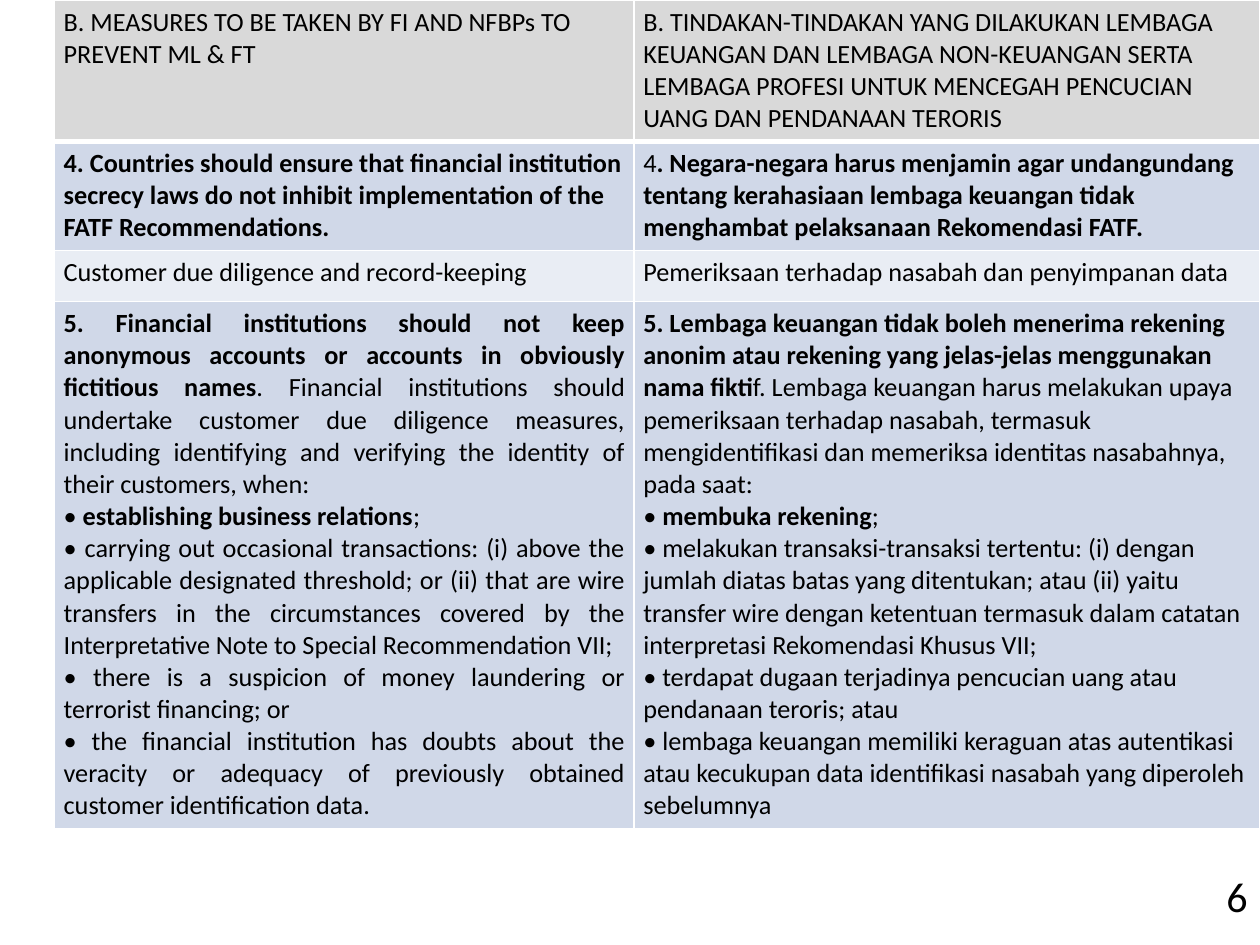
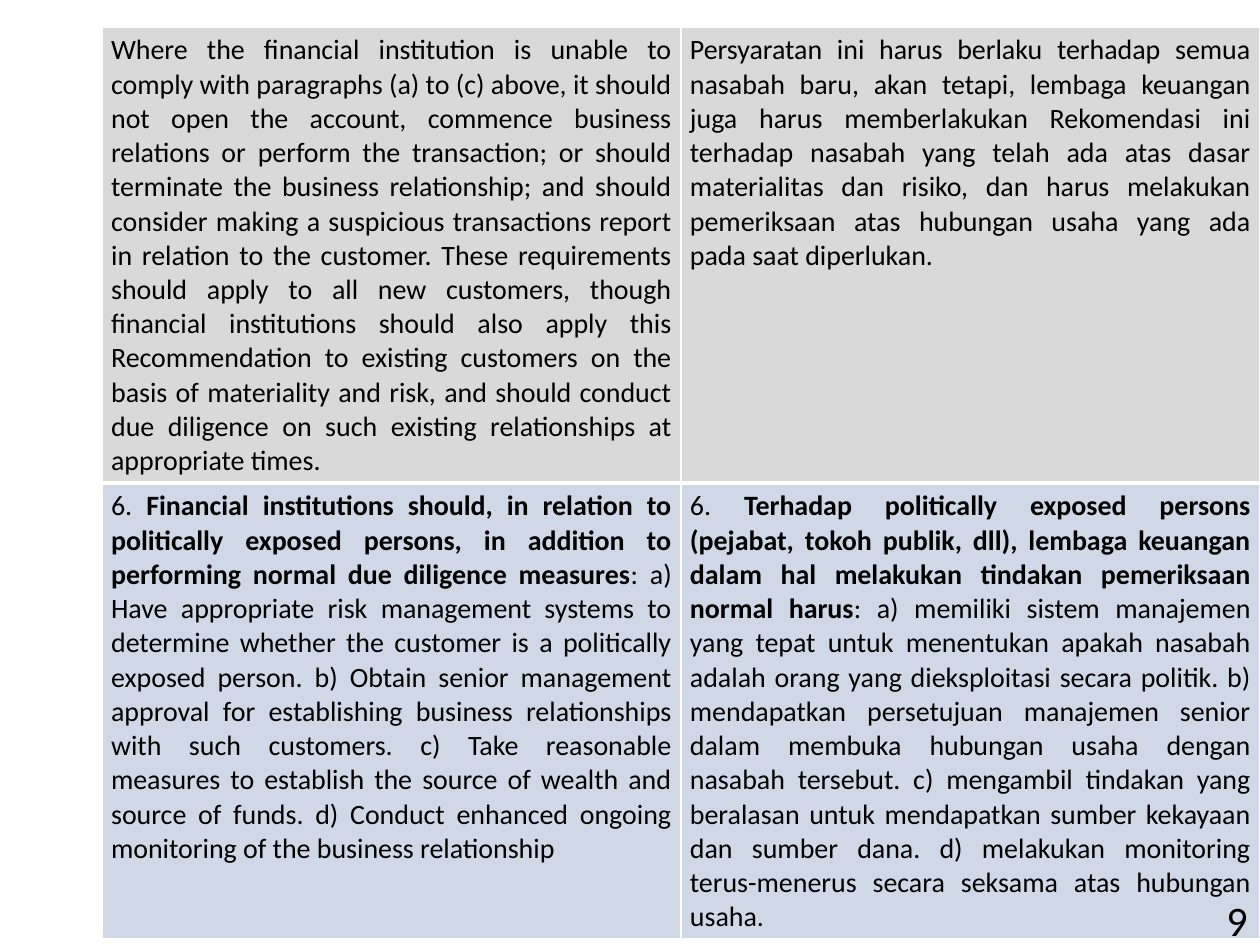
from dataclasses import dataclass

import pptx
import pptx.dml.color
import pptx.enum.text
import pptx.oxml
import pptx.oxml.ns
import pptx.util
from pptx.util import Pt

COLOURS = {
    "page": "FFFFFF",
    "text": "000000",
    "heading": "D9D9D9",
    "rule": "D0D8E8",
    "topic": "E9EDF4",
    "border": "FFFFFF",
}
FONT = "Calibri"
SLIDE_WIDTH, SLIDE_HEIGHT = 720, 540
PAGE_NUMBER_SIZE = 24
LEFT = pptx.enum.text.PP_ALIGN.LEFT
RIGHT = pptx.enum.text.PP_ALIGN.RIGHT
JUSTIFY = pptx.enum.text.PP_ALIGN.JUSTIFY


@dataclass
class Passage:
    """Paragraphs of one cell; ** switches bold on and off."""
    paragraphs: list[str]
    align: pptx.enum.text.PP_ALIGN = LEFT


@dataclass
class Row:
    fill: str
    height: float
    english: Passage
    indonesian: Passage


@dataclass
class Page:
    number: str
    number_left: float
    number_top: float
    table_left: float
    table_top: float
    english_width: float
    text_size: float
    rows: list[Row]


PAGES = [
    Page("6", 686.9, 497.5, 31.2, 0, 331.2, 15, [
        Row("heading", 80.5,
            Passage(["B. MEASURES TO BE TAKEN BY FI AND NFBPs TO PREVENT ML & FT"]),
            Passage(["B. TINDAKAN-TINDAKAN YANG DILAKUKAN LEMBAGA KEUANGAN DAN "
                     "LEMBAGA NON-KEUANGAN SERTA LEMBAGA PROFESI UNTUK MENCEGAH "
                     "PENCUCIAN UANG DAN PENDANAAN TERORIS"])),
        Row("rule", 62,
            Passage(["**4. Countries should ensure that financial institution "
                     "secrecy laws do not inhibit implementation of the FATF "
                     "Recommendations."]),
            Passage(["4**. Negara-negara harus menjamin agar undangundang tentang "
                     "kerahasiaan lembaga keuangan tidak menghambat pelaksanaan "
                     "Rekomendasi FATF."])),
        Row("topic", 29.2,
            Passage(["Customer due diligence and record-keeping"]),
            Passage(["Pemeriksaan terhadap nasabah dan penyimpanan data"])),
        Row("rule", 301,
            Passage([
                "**5. Financial institutions should not keep anonymous accounts or "
                "accounts in obviously fictitious names**. Financial institutions "
                "should undertake customer due diligence measures, including "
                "identifying and verifying the identity of their customers, when:",
                "• **establishing business relations**;",
                "• carrying out occasional transactions: (i) above the applicable "
                "designated threshold; or (ii) that are wire transfers in the "
                "circumstances covered by the Interpretative Note to Special "
                "Recommendation VII;",
                "• there is a suspicion of money laundering or terrorist "
                "financing; or",
                "• the financial institution has doubts about the veracity or "
                "adequacy of previously obtained customer identification data.",
            ], JUSTIFY),
            Passage([
                "**5. Lembaga keuangan tidak boleh menerima rekening anonim atau "
                "rekening yang jelas-jelas menggunakan nama fikti**f. Lembaga "
                "keuangan harus melakukan upaya pemeriksaan terhadap nasabah, "
                "termasuk mengidentifikasi dan memeriksa identitas nasabahnya, "
                "pada saat:",
                "• **membuka rekening**;",
                "• melakukan transaksi-transaksi tertentu: (i) dengan jumlah diatas "
                "batas yang ditentukan; atau (ii) yaitu transfer wire dengan "
                "ketentuan termasuk dalam catatan interpretasi Rekomendasi "
                "Khusus VII;",
                "• terdapat dugaan terjadinya pencucian uang atau pendanaan "
                "teroris; atau",
                "• lembaga keuangan memiliki keraguan atas autentikasi atau "
                "kecukupan data identifikasi nasabah yang diperoleh sebelumnya",
            ])),
    ]),
    Page("9", 690.5, 511.2, 58.3, 15.4, 330.8, 16, [
        Row("heading", 260.6,
            Passage([
                "Where the financial institution is unable to comply with "
                "paragraphs (a) to (c) above, it should not open the account, "
                "commence business relations or perform the transaction; or should "
                "terminate the business relationship; and should consider making a "
                "suspicious transactions report in relation to the customer. These "
                "requirements should apply to all new customers, though financial "
                "institutions should also apply this Recommendation to existing "
                "customers on the basis of materiality and risk, and should conduct "
                "due diligence on such existing relationships at appropriate times.",
            ], JUSTIFY),
            Passage([
                "Persyaratan ini harus berlaku terhadap semua nasabah baru, akan "
                "tetapi, lembaga keuangan juga harus memberlakukan Rekomendasi ini "
                "terhadap nasabah yang telah ada atas dasar materialitas dan "
                "risiko, dan harus melakukan pemeriksaan atas hubungan usaha yang "
                "ada pada saat diperlukan.",
            ], JUSTIFY)),
        Row("rule", 260.6,
            Passage([
                "6. **Financial institutions should, in relation to politically "
                "exposed persons, in addition to performing normal due diligence "
                "measures**: a) Have appropriate risk management systems to "
                "determine whether the customer is a politically exposed person. "
                "b) Obtain senior management approval for establishing business "
                "relationships with such customers. c) Take reasonable measures to "
                "establish the source of wealth and source of funds. d) Conduct "
                "enhanced ongoing monitoring of the business relationship",
            ], JUSTIFY),
            Passage([
                "6. **Terhadap politically exposed persons (pejabat, tokoh publik, "
                "dll), lembaga keuangan dalam hal melakukan tindakan pemeriksaan "
                "normal harus**: a) memiliki sistem manajemen yang tepat untuk "
                "menentukan apakah nasabah adalah orang yang dieksploitasi secara "
                "politik. b) mendapatkan persetujuan manajemen senior dalam membuka "
                "hubungan usaha dengan nasabah tersebut. c) mengambil tindakan yang "
                "beralasan untuk mendapatkan sumber kekayaan dan sumber dana. "
                "d) melakukan monitoring terus-menerus secara seksama atas hubungan "
                "usaha.",
            ], JUSTIFY)),
    ]),
]


def rgb(name: str) -> pptx.dml.color.RGBColor:
    return pptx.dml.color.RGBColor.from_string(COLOURS[name])


def write(frame, passage: Passage, size: float) -> None:
    for index, marked_text in enumerate(passage.paragraphs):
        paragraph = frame.add_paragraph() if index else frame.paragraphs[0]
        paragraph.alignment = passage.align
        for part, words in enumerate(marked_text.split("**")):
            if not words:
                continue
            run = paragraph.add_run()
            run.text = words
            run.font.name = FONT
            run.font.size = Pt(size)
            run.font.bold = part % 2 == 1
            run.font.color.rgb = rgb("text")


def add_borders(cell, bottom_width: float) -> None:
    """Borders come before the fill in the cell properties."""
    properties = cell._tc.get_or_add_tcPr()
    widths = {"lnL": 1, "lnR": 1, "lnT": 1, "lnB": bottom_width}
    for index, (side, width) in enumerate(widths.items()):
        properties.insert(index, pptx.oxml.parse_xml(
            f'<a:{side} {pptx.oxml.ns.nsdecls("a")} w="{Pt(width)}">'
            f'<a:solidFill><a:srgbClr val="{COLOURS["border"]}"/></a:solidFill>'
            f'</a:{side}>'))


def add_translation_table(slide, page: Page) -> None:
    # The Indonesian column runs to the right edge of the slide
    width = SLIDE_WIDTH - page.table_left
    height = sum(row.height for row in page.rows)
    table = slide.shapes.add_table(
        len(page.rows), 2, Pt(page.table_left), Pt(page.table_top),
        Pt(width), Pt(height)).table
    table.first_row = table.horz_banding = False
    table.columns[0].width = Pt(page.english_width)
    table.columns[1].width = Pt(width - page.english_width)

    for index, row in enumerate(page.rows):
        table.rows[index].height = Pt(row.height)
        for column, passage in enumerate((row.english, row.indonesian)):
            cell = table.cell(index, column)
            cell.margin_left = cell.margin_right = Pt(5.2)
            cell.margin_top = cell.margin_bottom = Pt(3.6)
            cell.fill.solid()
            cell.fill.fore_color.rgb = rgb(row.fill)
            add_borders(cell, 3 if row.fill == "heading" else 1)
            write(cell.text_frame, passage, page.text_size)


def add_page_number(slide, page: Page) -> None:
    number = slide.shapes.add_textbox(
        Pt(page.number_left), Pt(page.number_top),
        Pt(SLIDE_WIDTH - page.number_left), Pt(28.8))
    frame = number.text_frame
    frame.word_wrap = True
    frame.vertical_anchor = pptx.enum.text.MSO_ANCHOR.MIDDLE
    write(frame, Passage([page.number], RIGHT), PAGE_NUMBER_SIZE)


def main() -> None:
    deck = pptx.Presentation()
    deck.slide_width, deck.slide_height = Pt(SLIDE_WIDTH), Pt(SLIDE_HEIGHT)
    blank_layout = deck.slide_layouts[6]
    for page in PAGES:
        slide = deck.slides.add_slide(blank_layout)
        slide.background.fill.solid()
        slide.background.fill.fore_color.rgb = rgb("page")
        add_translation_table(slide, page)
        add_page_number(slide, page)
    deck.save("out.pptx")


if __name__ == "__main__":
    main()
